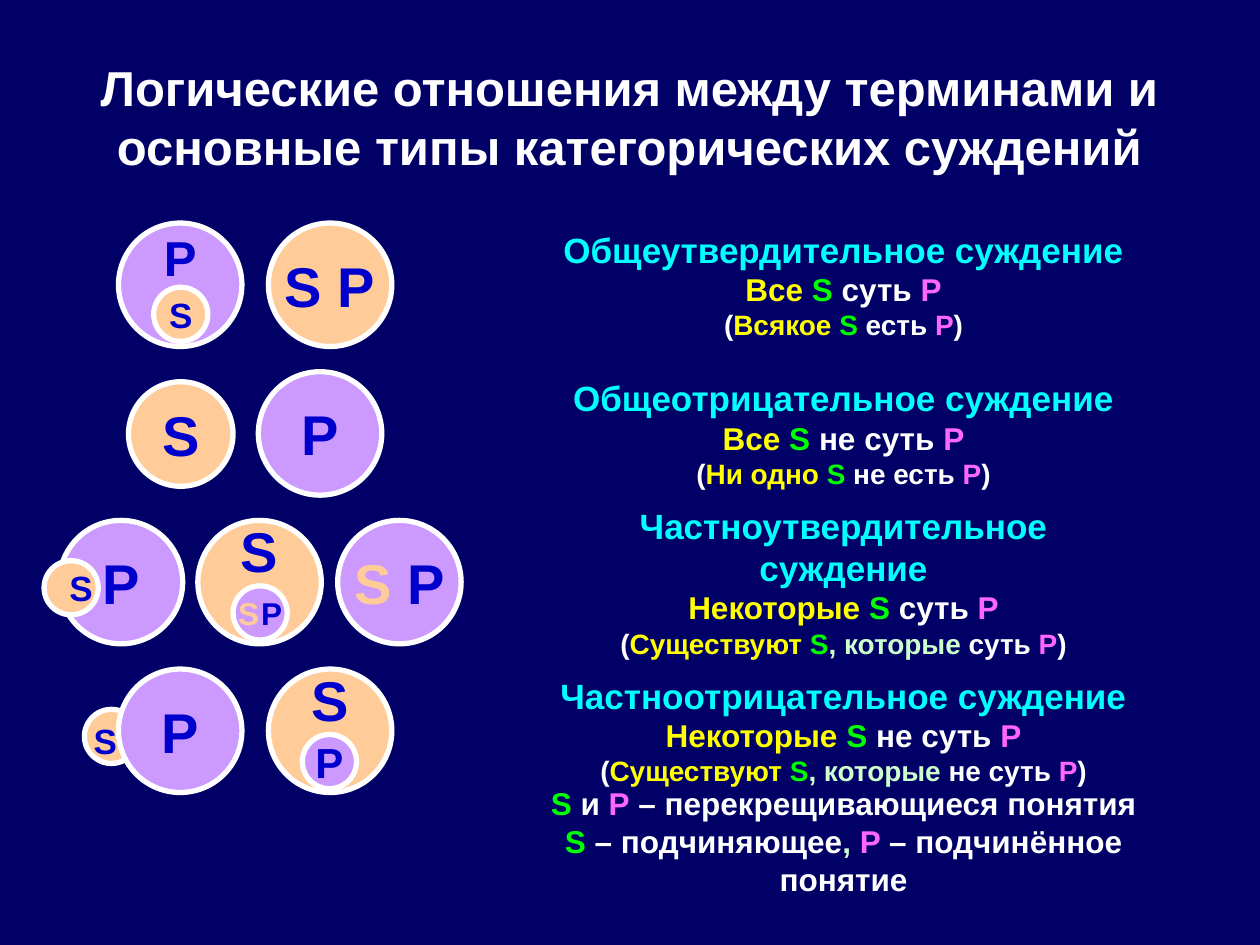
from dataclasses import dataclass
from typing import NamedTuple

from pptx import Presentation
from pptx.dml.color import RGBColor
from pptx.enum.shapes import MSO_SHAPE
from pptx.enum.text import MSO_ANCHOR, PP_ALIGN
from pptx.util import Emu, Pt

SCALE = 9144  # 100 px to the inch
ROW_TOP, ROW_PITCH = 177, 118
BIG, MEDIUM, SMALL = 98, 83, 43

NAVY, WHITE, BLUE = "000066", "FFFFFF", "0000CC"
VIOLET, PEACH = "CC99FF", "FFCC99"
CYAN, YELLOW, GREEN, PINK, MINT = "00FFFF", "FFFF00", "00FF00", "FF66FF", "CCFFCC"


class Run(NamedTuple):
    text: str
    size: int
    color: str = BLUE


@dataclass
class Circle:
    left: int
    top: int
    size: int
    fill: str
    runs: list[Run]
    insets: tuple[int, int, int, int] = (0, 0, 0, 0)  # left, top, right, bottom


@dataclass
class Judgement:
    name: str
    quantifier: str
    copula: str
    reading: str
    link: str
    reading_copula: str


def px(n: int) -> Emu:
    return Emu(n * SCALE)


def rgb(color: str) -> RGBColor:
    return RGBColor.from_string(color)


def row(i: int) -> int:
    return ROW_TOP + ROW_PITCH * i


def write(tf, lines: list[list[Run]], wrap: bool = False,
          insets: tuple[int, int, int, int] = (10, 5, 10, 5)) -> None:
    tf.word_wrap = wrap
    tf.vertical_anchor = MSO_ANCHOR.MIDDLE
    tf.margin_left, tf.margin_top, tf.margin_right, tf.margin_bottom = map(px, insets)
    for i, runs in enumerate(lines):
        p = tf.add_paragraph() if i else tf.paragraphs[0]
        p.alignment = PP_ALIGN.CENTER
        for run in runs:
            r = p.add_run()
            r.text = run.text
            r.font.name = "Arial"
            r.font.bold = True
            r.font.size = Pt(run.size)
            r.font.color.rgb = rgb(run.color)


def draw_circle(s, c: Circle) -> None:
    sp = s.shapes.add_shape(MSO_SHAPE.OVAL, px(c.left), px(c.top), px(c.size), px(c.size))
    sp.shadow.inherit = False
    sp.fill.solid()
    sp.fill.fore_color.rgb = rgb(c.fill)
    sp.line.color.rgb = rgb(WHITE)
    sp.line.width = Pt(3)
    write(sp.text_frame, [c.runs], insets=c.insets)


def draw_text(s, left: int, top: int, width: int, height: int,
              lines: list[list[Run]], wrap: bool = False) -> None:
    box = s.shapes.add_textbox(px(left), px(top), px(width), px(height))
    write(box.text_frame, lines, wrap)


def judgement_lines(j: Judgement) -> list[list[Run]]:
    return [
        [Run(j.name, 20, CYAN)],
        [Run(j.quantifier, 18, YELLOW), Run("S ", 18, GREEN),
         Run(j.copula, 18, WHITE), Run("P", 18, PINK)],
        [Run("(", 16, WHITE), Run(j.reading, 16, YELLOW), Run("S", 16, GREEN),
         Run(j.link, 16, MINT), Run(j.reading_copula, 16, WHITE),
         Run("P", 16, PINK), Run(")", 16, WHITE)],
    ]


TITLE = "Логические отношения между терминами и основные типы категорических суждений"

CIRCLES = [
    # All S are P
    Circle(94, row(0), BIG, VIOLET, [Run("P", 28)], (0, 0, 0, 45)),
    Circle(122, row(0) + 51, SMALL, PEACH, [Run("S", 20)]),
    Circle(213, row(0), BIG, PEACH, [Run("S P", 32)]),
    # No S is P
    Circle(102, row(1) + 8, MEDIUM, PEACH, [Run("S", 32)]),
    Circle(205, row(1), BIG, VIOLET, [Run("P", 32)]),
    # Some S are P
    Circle(47, row(2), BIG, VIOLET, [Run("P", 32)]),
    Circle(35, row(2) + 32, SMALL, PEACH, [Run("S", 20)], (16, 0, 0, 0)),
    Circle(157, row(2), BIG, PEACH, [Run("S", 32)], (0, 0, 0, 51)),
    Circle(185, row(2) + 52, SMALL, VIOLET,
           [Run("S", 18, PEACH), Run(" ", 4), Run("P", 18)]),
    Circle(268, row(2), BIG, VIOLET, [Run("S ", 32, PEACH), Run("P", 32)]),
    # Some S are not P
    Circle(67, row(3) + 32, SMALL, PEACH, [Run("S", 20)], (0, 6, 10, 0)),
    Circle(94, row(3), BIG, VIOLET, [Run("P", 32)]),
    Circle(213, row(3), BIG, PEACH, [Run("S", 32)], (0, 0, 0, 51)),
    Circle(240, row(3) + 52, SMALL, VIOLET, [Run("P", 24)]),
]

JUDGEMENTS = [
    Judgement("Общеутвердительное суждение", "Все ", "суть ",
              "Всякое ", " ", "есть "),
    Judgement("Общеотрицательное суждение", "Все ", "не суть ",
              "Ни одно ", " ", "не есть "),
    Judgement("Частноутвердительное суждение", "Некоторые ", "суть ",
              "Существуют ", ", которые ", "суть "),
    Judgement("Частноотрицательное суждение", "Некоторые ", "не суть ",
              "Существуют ", ", которые ", "не суть "),
]

CONCEPTS = [
    [Run("S ", 18, GREEN), Run("и ", 18, WHITE), Run("P", 18, PINK),
     Run(" – перекрещивающиеся понятия", 18, WHITE)],
    [Run("S ", 18, GREEN), Run("– подчиняющее", 18, WHITE), Run(", ", 18, MINT),
     Run("P ", 18, PINK), Run("– подчинённое понятие", 18, WHITE)],
]


def main() -> None:
    prs = Presentation()
    prs.slide_width, prs.slide_height = px(1000), px(750)
    s = prs.slides.add_slide(prs.slide_layouts[6])
    s.background.fill.solid()
    s.background.fill.fore_color.rgb = rgb(NAVY)

    draw_text(s, 30, 30, 939, 125, [[Run(TITLE, 28, WHITE)]], wrap=True)
    for circle in CIRCLES:
        draw_circle(s, circle)
    for i, judgement in enumerate(JUDGEMENTS):
        draw_text(s, 433, row(i), 473, BIG, judgement_lines(judgement))
    draw_text(s, 394, 638, 551, 59, CONCEPTS)
    prs.save("out.pptx")


if __name__ == "__main__":
    main()
